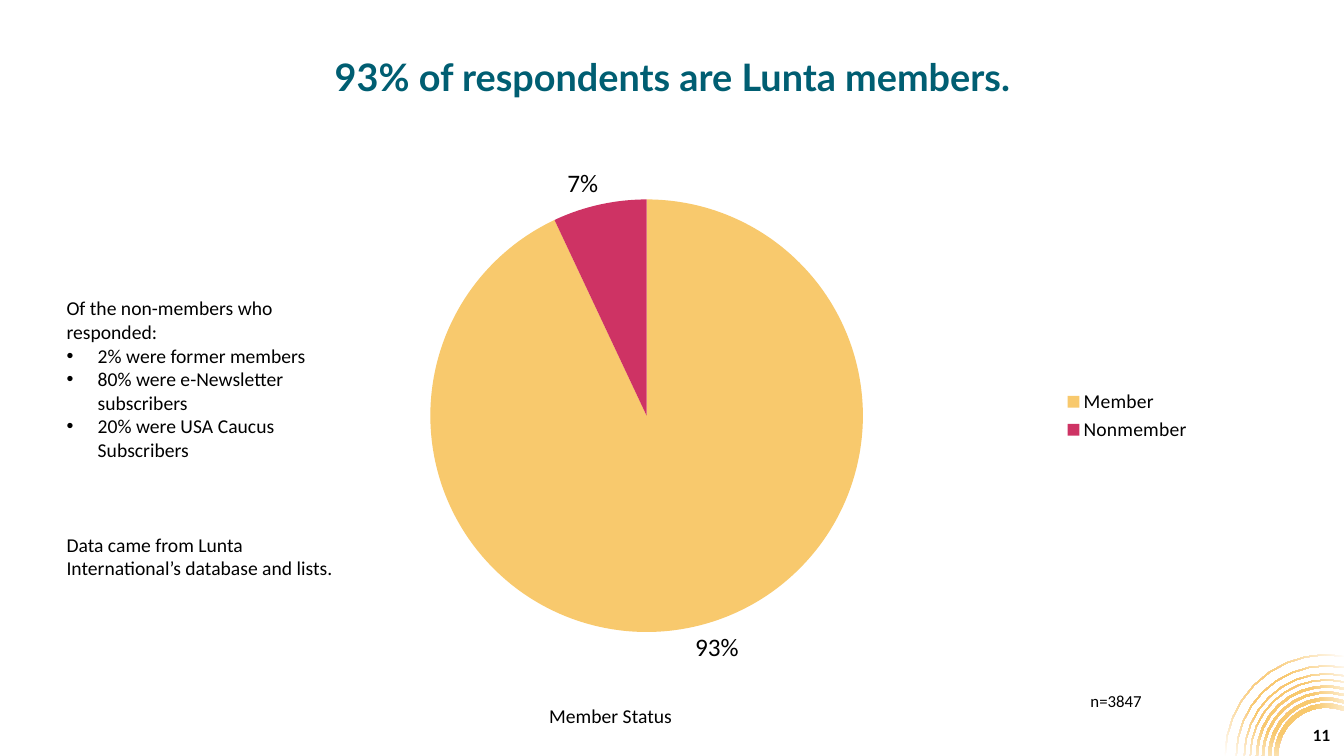
from math import acos, cos, pi, sin

from lxml import etree
from pptx import Presentation
from pptx.chart.data import CategoryChartData
from pptx.dml.color import RGBColor
from pptx.enum.chart import XL_CHART_TYPE, XL_LABEL_POSITION, XL_LEGEND_POSITION
from pptx.enum.text import MSO_ANCHOR, MSO_AUTO_SIZE, PP_ALIGN
from pptx.oxml import parse_xml
from pptx.oxml.ns import nsdecls, qn
from pptx.util import Inches, Pt

GOLD, CRIMSON, TEAL, BLACK, WHITE = "F8C96D", "CE3364", "005E72", "000000", "FFFFFF"
SLIDE_W, SLIDE_H = 40 / 3, 7.5
# Outer radius and thickness of each corner arc, in inches
ARCS = [(0.52, 0.04), (0.58, 0.03), (0.64, 0.02), (0.7, 0.02),
        (0.76, 0.01), (0.82, 0.01), (0.9, 0.01), (1.01, 0.01)]
ARC_STEPS = 9


def rgb(hex_colour):
    return RGBColor.from_string(hex_colour)


def style_font(font, size, name="Calibri", colour=BLACK, bold=False):
    font.size, font.name, font.bold = Pt(size), name, bold
    font.color.rgb = rgb(colour)


def place(shape, box):
    shape.left, shape.top, shape.width, shape.height = map(Inches, box)


def arc_outline(centre_x, centre_y, outer, thickness):
    """Points of a band from the slide's bottom edge round to its right edge."""
    def edge(radius):
        end = acos((SLIDE_W - centre_x) / radius)
        angles = [pi + (end - pi) * step / ARC_STEPS for step in range(ARC_STEPS + 1)]
        return [(Inches(centre_x + radius * cos(a)), Inches(centre_y - radius * sin(a)))
                for a in angles]
    return edge(outer) + edge(outer - thickness)[::-1]


def add_corner_arcs(slide, centre_x, centre_y):
    outlines = [arc_outline(centre_x, centre_y, *arc) for arc in ARCS]
    builder = slide.shapes.build_freeform(*outlines[0][0])
    for index, outline in enumerate(outlines):
        if index:
            builder.move_to(*outline[0])
        builder.add_line_segments(outline[1:], close=True)
    arcs = builder.convert_to_shape()
    arcs.shadow.inherit = False
    arcs.line.fill.background()
    arcs.fill.gradient()
    for stop, position, colour in zip(arcs.fill.gradient_stops, (0.37, 1), (GOLD, WHITE)):
        stop.position = position
        stop.color.rgb = rgb(colour)
    gradient = arcs.fill._xPr.find(qn("a:gradFill"))
    gradient.replace(gradient.find(qn("a:lin")), parse_xml(
        f'<a:path {nsdecls("a")} path="circle">'
        '<a:fillToRect l="50000" t="50000" r="50000" b="50000"/></a:path>'))


def add_heading(slide, box, text):
    heading = slide.shapes.title
    place(heading, box)
    frame = heading.text_frame
    frame.text = text
    frame.auto_size = MSO_AUTO_SIZE.NONE
    frame.vertical_anchor = MSO_ANCHOR.MIDDLE
    line = frame.paragraphs[0]
    line.alignment, line.line_spacing = PP_ALIGN.CENTER, 0.9
    style_font(line.font, 27, "Lato", TEAL, True)


def set_bullet(paragraph, bulleted):
    properties = paragraph._p.get_or_add_pPr()
    indent = Inches(0.31) if bulleted else 0
    properties.set("marL", str(indent))
    properties.set("indent", str(-indent))
    if bulleted:
        etree.SubElement(properties, qn("a:buFont"), typeface="Arial")
        etree.SubElement(properties, qn("a:buChar"), char="•")
    else:
        etree.SubElement(properties, qn("a:buNone"))


def add_nonmember_notes(slide, box, intro, findings, data_source):
    notes = slide.placeholders[1]
    place(notes, box)
    frame = notes.text_frame
    frame.text = "\n".join([intro, *findings, data_source])
    frame.auto_size = MSO_AUTO_SIZE.NONE
    for paragraph in frame.paragraphs:
        paragraph.space_before = Pt(0)
        set_bullet(paragraph, paragraph.text in findings)
        style_font(paragraph.font, 14)
    frame.paragraphs[-1].space_before = Pt(51)


def add_member_pie(slide, box, shares):
    data = CategoryChartData(number_format="0%")
    data.categories = list(shares)
    data.add_series("Series 1", [share for share, _ in shares.values()])
    pie = slide.shapes.add_chart(XL_CHART_TYPE.PIE, *map(Inches, box), data).chart
    pie.has_title = False
    style_font(pie.font, 18)

    pie.has_legend = True
    pie.legend.position = XL_LEGEND_POSITION.RIGHT
    pie.legend.include_in_layout = False
    style_font(pie.legend.font, 14)

    plot = pie.plots[0]
    plot.vary_by_categories = True
    for index, (_, colour) in enumerate(shares.values()):
        fill = plot.series[0].points[index].format.fill
        fill.solid()
        fill.fore_color.rgb = rgb(colour)
    plot.has_data_labels = True
    labels = plot.data_labels
    labels.show_value, labels.show_percentage = True, False
    labels.number_format, labels.number_format_is_linked = "0%", False
    labels.position = XL_LABEL_POSITION.OUTSIDE_END
    style_font(labels.font, 18)
    set_plot_area(pie, x=0.18, y=0.09, w=0.46, h=0.82)


def set_plot_area(chart, **fractions):
    area = chart._chartSpace.chart.plotArea
    for old in area.findall(qn("c:layout")):
        area.remove(old)
    layout = etree.Element(qn("c:layout"))
    manual = etree.SubElement(layout, qn("c:manualLayout"))
    settings = {"layoutTarget": "inner", "xMode": "edge", "yMode": "edge", **fractions}
    for tag, value in settings.items():
        etree.SubElement(manual, qn(f"c:{tag}"), val=str(value))
    area.insert(0, layout)


def add_caption(slide, box, text, size, align=PP_ALIGN.LEFT, anchor=MSO_ANCHOR.TOP, **font):
    frame = slide.shapes.add_textbox(*map(Inches, box)).text_frame
    frame.word_wrap = True
    frame.vertical_anchor = anchor
    frame.text = text
    frame.paragraphs[0].alignment = align
    style_font(frame.paragraphs[0].font, size, **font)


def main():
    deck = Presentation()
    deck.slide_width, deck.slide_height = Inches(SLIDE_W), Inches(SLIDE_H)
    slide = deck.slides.add_slide(deck.slide_layouts[1])

    add_corner_arcs(slide, 13.16, SLIDE_H)
    add_heading(slide, (0.34, 0.4, 12.66, 0.77), "93% of respondents are Lunta members.")
    add_member_pie(slide, (2.59, 1.5, 9.33, 5.25),
                   {"Member": (0.93, GOLD), "Nonmember": (0.07, CRIMSON)})
    add_nonmember_notes(
        slide, (0.56, 2.89, 2.86, 2.93),
        "Of the non-members who responded:",
        ["2% were former members",
         "80% were e-Newsletter subscribers",
         "20% were USA Caucus Subscribers"],
        "Data came from Lunta International’s database and lists.")
    add_caption(slide, (5.35, 6.93, 7.25, 0.34), "Member Status", 14)
    add_caption(slide, (10.72, 6.8, 1.48, 0.3), "n=3847", 12)
    add_caption(slide, (10.3, 7.18, 3, 0.24), "11", 11, PP_ALIGN.RIGHT,
                MSO_ANCHOR.MIDDLE, name="Lato", bold=True)
    deck.save("out.pptx")


if __name__ == "__main__":
    main()
